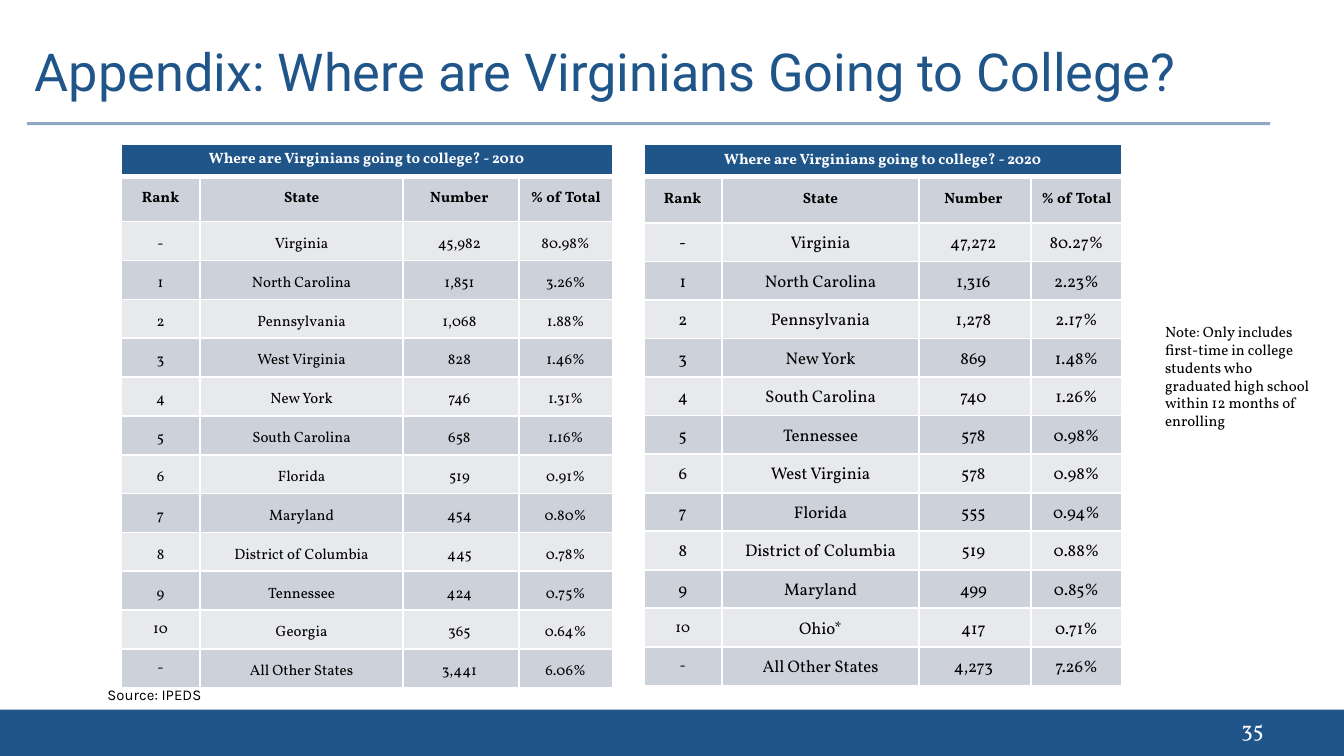
from dataclasses import dataclass
from lxml.etree import SubElement
from pptx import Presentation
from pptx.dml.color import RGBColor
from pptx.enum.shapes import MSO_CONNECTOR, MSO_SHAPE
from pptx.enum.text import MSO_ANCHOR, PP_ALIGN
from pptx.oxml.ns import qn
from pptx.util import Inches, Pt


@dataclass(frozen=True)
class Theme:
    blue: str = "20558A"
    white: str = "FFFFFF"
    black: str = "000000"
    dark: str = "CDD1DA"
    light: str = "E8E9ED"
    head: str = "Roboto"
    body: str = "Vollkorn"
    plain: str = "Karla"
    title: int = 28
    page: int = 12
    large: int = 9
    small: int = 8


THEME = Theme()
LABELS = ("Rank", "State", "Number ", "% of Total")
RANKS = ["-", *map(str, range(1, 11)), "-"]

DATA_2010 = [
    ("Virginia", "45,982 ", "80.98%"),
    ("North Carolina", "1,851 ", "3.26%"),
    ("Pennsylvania", "1,068 ", "1.88%"),
    ("West Virginia", "828 ", "1.46%"),
    ("New York", "746 ", "1.31%"),
    ("South Carolina", "658 ", "1.16%"),
    ("Florida", "519 ", "0.91%"),
    ("Maryland", "454 ", "0.80%"),
    ("District of Columbia", "445 ", "0.78%"),
    ("Tennessee", "424 ", "0.75%"),
    ("Georgia", "365 ", "0.64%"),
    ("All Other States", "3,441 ", "6.06%"),
]
DATA_2020 = [
    ("Virginia", "47,272 ", "80.27%"),
    ("North Carolina", "1,316 ", "2.23%"),
    ("Pennsylvania", "1,278 ", "2.17%"),
    ("New York", "869 ", "1.48%"),
    ("South Carolina", "740 ", "1.26%"),
    ("Tennessee", "578 ", "0.98%"),
    ("West Virginia", "578 ", "0.98%"),
    ("Florida", "555 ", "0.94%"),
    ("District of Columbia", "519 ", "0.88%"),
    ("Maryland", "499 ", "0.85%"),
    ("Ohio*", "417 ", "0.71%"),
    ("All Other States", "4,273 ", "7.26%"),
]


def color(code):
    return RGBColor.from_string(code)


def write(frame, text, size, face, tint, align=PP_ALIGN.LEFT, bold=False):
    frame.text = text
    para = frame.paragraphs[0]
    para.alignment = align
    font = para.runs[0].font
    font.size, font.name, font.bold = Pt(size), face, bold
    font.color.rgb = color(tint)


def add_title(slide, text):
    title = slide.shapes.title
    title.left, title.top = Inches(0.16), Inches(0.24)
    title.width, title.height = Inches(9.07), Inches(0.67)
    write(title.text_frame, text, THEME.title, THEME.head, THEME.blue)
    title.text_frame.vertical_anchor = MSO_ANCHOR.TOP


def add_text(slide, box, text, size, face, tint, align=PP_ALIGN.LEFT):
    frame = slide.shapes.add_textbox(*map(Inches, box)).text_frame
    frame.word_wrap = True
    write(frame, text, size, face, tint, align)
    return frame


def add_band(slide):
    band = slide.shapes.add_shape(
        MSO_SHAPE.RECTANGLE, Inches(-0.01), Inches(5.28), Inches(10.01), Inches(0.35))
    band.shadow.inherit = False
    band.fill.solid()
    band.fill.fore_color.rgb = color(THEME.blue)
    band.line.fill.background()


def add_rule(slide):
    rule = slide.shapes.add_connector(
        MSO_CONNECTOR.STRAIGHT, Inches(0.2), Inches(0.92), Inches(9.45), Inches(0.92))
    rule.line.width = Pt(1.5)
    rule.line.color.rgb = color(THEME.blue)
    props = rule._element.spPr
    tint = next(props.iter(qn("a:srgbClr")))
    SubElement(tint, qn("a:alpha")).set("val", "50000")
    SubElement(props, qn("a:effectLst"))


def set_edges(cell, top=1, bottom=1):
    props = cell._tc.get_or_add_tcPr()
    for side, width in zip("LRTB", (1, 1, top, bottom)):
        line = SubElement(props, qn(f"a:ln{side}"), w=str(Pt(width)))
        fill = SubElement(line, qn("a:solidFill"))
        SubElement(fill, qn("a:srgbClr"), val=THEME.white)


def style_cell(cell, text, size, tint, fill, bold, anchor, pads, edges=(1, 1)):
    set_edges(cell, *edges)
    cell.fill.solid()
    cell.fill.fore_color.rgb = color(fill)
    cell.vertical_anchor = anchor
    (cell.margin_left, cell.margin_top,
     cell.margin_right, cell.margin_bottom) = map(Inches, pads)
    if text:
        write(cell.text_frame, text, size, THEME.body, tint, PP_ALIGN.CENTER, bold)


def add_ranking(slide, year, data, box, cols, heads, size, pad):
    """Banner row, label row, then equal rows sharing the rest of the height."""
    table = slide.shapes.add_table(len(data) + 2, 4, *map(Inches, box)).table
    table.first_row = table.horz_banding = False
    for col, width in zip(table.columns, cols):
        col.width = Inches(width)
    step = (box[3] - sum(heads)) / len(data)
    for row, height in zip(table.rows, [*heads, *[step] * len(data)]):
        row.height = Inches(height)

    # Banner across all columns
    table.cell(0, 0).merge(table.cell(0, 3))
    banner = f"Where are Virginians going to college? - {year}"
    for col in range(4):
        style_cell(table.cell(0, col), "" if col else banner, THEME.small,
                   THEME.white, THEME.blue, True, MSO_ANCHOR.TOP,
                   (pad, pad / 2, pad, pad / 2), (1, 3))

    # Column labels
    for col, label in enumerate(LABELS):
        style_cell(table.cell(1, col), label, THEME.small, THEME.black, THEME.dark,
                   True, MSO_ANCHOR.MIDDLE, (0.07, 0.04, 0.07, 0.04), (3, 1))

    # Ranked states; the last two ranks sit mid-cell in small type
    for i, (rank, record) in enumerate(zip(RANKS, data)):
        fill = THEME.dark if i % 2 else THEME.light
        for col, text in enumerate((rank, *record)):
            mid = col == 0 and i >= len(data) - 2
            style_cell(table.cell(i + 2, col), text, THEME.small if mid else size,
                       THEME.black, fill, False,
                       MSO_ANCHOR.MIDDLE if mid else MSO_ANCHOR.BOTTOM,
                       (0.01, 0.01, 0.01, 0 if mid else 0.04))


def main():
    deck = Presentation()
    deck.slide_width = Inches(10)
    deck.slide_height = deck.slide_width * 9 // 16
    slide = deck.slides.add_slide(deck.slide_layouts[5])

    # Frame: footer band, rule, page number, title
    add_band(slide)
    add_rule(slide)
    page = add_text(slide, (7.17, 5.27, 2.33, 0.3), "35", THEME.page,
                    THEME.body, THEME.white, PP_ALIGN.RIGHT)
    page.vertical_anchor = MSO_ANCHOR.MIDDLE
    add_title(slide, "Appendix: Where are Virginians Going to College?")

    # Source line, indented
    source = add_text(slide, (0.58, 5.05, 2.47, 0.35), "Source: IPEDS",
                      THEME.small, THEME.plain, THEME.black)
    source.margin_left = Inches(0.22)

    # Rankings side by side
    add_ranking(slide, 2010, DATA_2010, (0.9, 1.07, 3.66, 4.05),
                (0.59, 1.51, 0.86, 0.7), (0.24, 0.34), THEME.small, 0.08)
    add_ranking(slide, 2020, DATA_2020, (4.79, 1.07, 3.56, 4.03),
                (0.58, 1.47, 0.83, 0.68), (0.24, 0.35), THEME.large, 0.09)

    # Side note
    add_text(slide, (8.57, 2.35, 1.29, 1.21),
             "Note: Only includes first-time in college students who graduated "
             "high school within 12 months of enrolling",
             THEME.small, THEME.body, THEME.black)

    deck.save("out.pptx")


if __name__ == "__main__":
    main()
